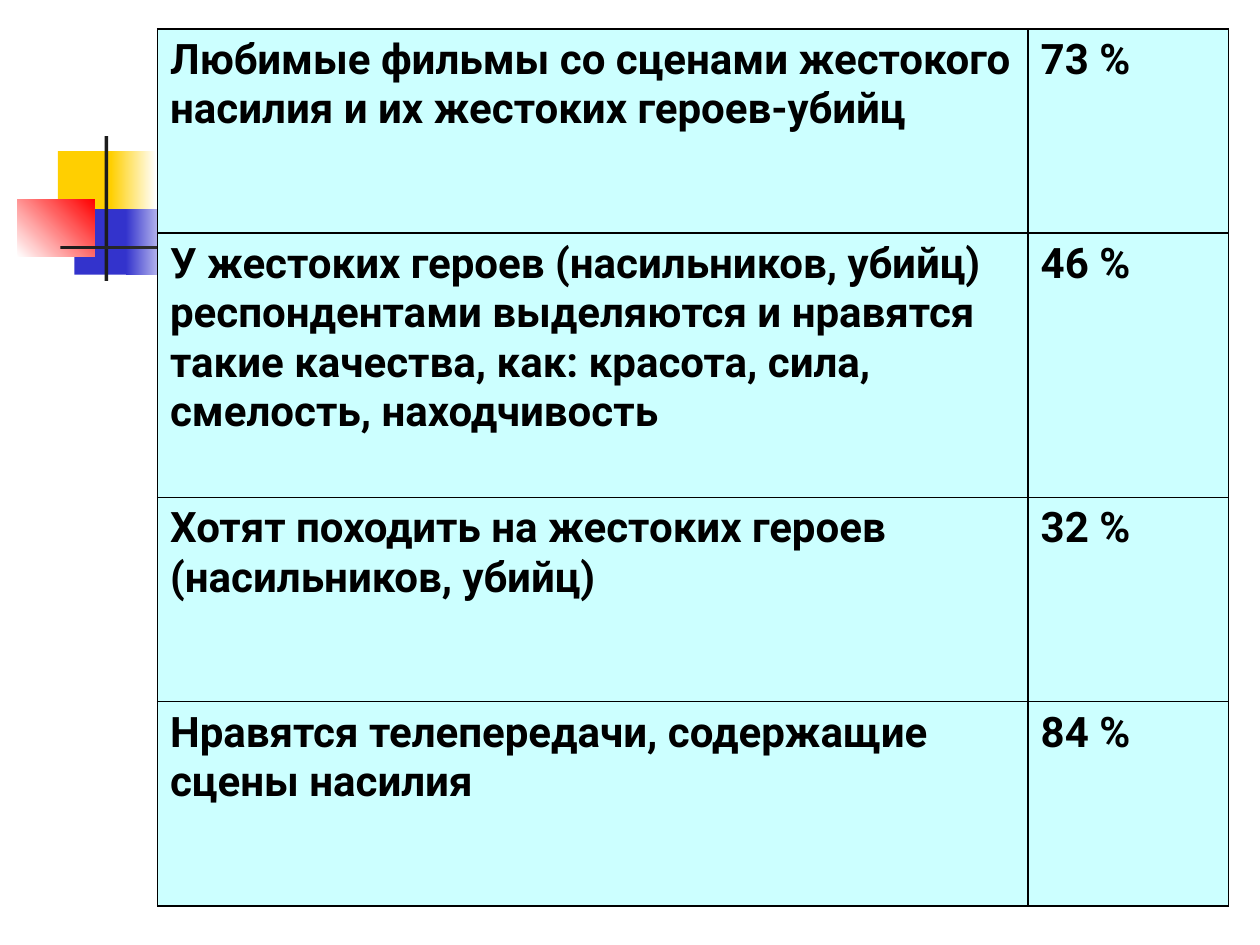
"""Build a slide with a survey table on attitudes to screen violence."""
from dataclasses import dataclass

from lxml import etree
from pptx import Presentation
from pptx.dml import color as c
from pptx.enum import shapes
from pptx.oxml import ns
from pptx.util import Inches, Pt


@dataclass(frozen=True)
class Theme:
    yellow: str = "FFCF01"
    blue: str = "3333CC"
    red: str = "FF0000"
    dark: str = "1C1C1C"
    white: str = "FFFFFF"
    ink: str = "000000"
    cell: str = "CCFFFF"
    font: str = "Roboto"
    size: int = 24
    border: int = 1


theme = Theme()


def write(frame, text, *, size=theme.size, color=theme.ink, bold=True):
    frame.word_wrap = True
    span = frame.paragraphs[0].add_run()
    span.text = text
    span.font.name = theme.font
    span.font.size = Pt(size)
    span.font.bold = bold
    span.font.color.rgb = c.RGBColor.from_string(color)


def add_border(cell, color=theme.ink, width=theme.border):
    properties = cell._tc.get_or_add_tcPr()
    for side in ("a:lnL", "a:lnR", "a:lnT", "a:lnB"):
        line = etree.SubElement(properties, ns.qn(side), w=str(Pt(width)))
        fill = etree.SubElement(line, ns.qn("a:solidFill"))
        etree.SubElement(fill, ns.qn("a:srgbClr"), val=color)


deck = Presentation()
deck.slide_width, deck.slide_height = Inches(10), Inches(7.5)
page = deck.slides.add_slide(deck.slide_layouts[6])

ornaments = [
    ((0.46, 1.2, 0.48, 0.52), (theme.yellow,), 0),
    ((0.88, 1.2, 0.36, 0.52), (theme.yellow, theme.white), 0),
    ((0.59, 1.66, 0.46, 0.52), (theme.blue,), 0),
    ((1, 1.66, 0.4, 0.52), (theme.blue, theme.white), 0),
    ((0.14, 1.58, 0.61, 0.46), (theme.white, theme.red), 45),
    ((0.83, 1.08, 0.03, 1.15), (theme.dark,), 0),
    ((0.48, 1.95, 9, 0.03), (theme.dark, theme.white), 0),
]
for place, colors, angle in ornaments:
    box = page.shapes.add_shape(shapes.MSO_SHAPE.RECTANGLE, *map(Inches, place))
    box.shadow.inherit = False
    box.line.fill.background()
    if len(colors) == 1:
        box.fill.solid()
        box.fill.fore_color.rgb = c.RGBColor.from_string(colors[0])
    else:
        box.fill.gradient()
        box.fill.gradient_angle = angle
        for stop, shade in zip(box.fill.gradient_stops, colors):
            stop.color.rgb = c.RGBColor.from_string(shade)

answers = [
    ("Любимые фильмы со сценами жестокого насилия и их жестоких героев-убийц", "73 %", 1.62),
    ("У жестоких героев (насильников, убийц) респондентами выделяются и нравятся "
     "такие качества, как: красота, сила, смелость, находчивость", "46 %", 2.1),
    ("Хотят походить на жестоких героев (насильников, убийц)", "32 %", 1.62),
    ("Нравятся телепередачи, содержащие сцены насилия", "84 %", 1.62),
]
table = page.shapes.add_table(
    len(answers), 2, Inches(1.25), Inches(0.23), Inches(8.5), Inches(6.97)
).table
table.first_row = table.horz_banding = False
for column, width in zip(table.columns, (6.91, 1.59)):
    column.width = Inches(width)
for row, (statement, share, height) in zip(table.rows, answers):
    row.height = Inches(height)
    for cell, text in zip(row.cells, (statement, share)):
        add_border(cell)
        cell.fill.solid()
        cell.fill.fore_color.rgb = c.RGBColor.from_string(theme.cell)
        cell.margin_left = cell.margin_right = Inches(0.1)
        cell.margin_top = cell.margin_bottom = Inches(0.05)
        write(cell.text_frame, text)

deck.save("out.pptx")
